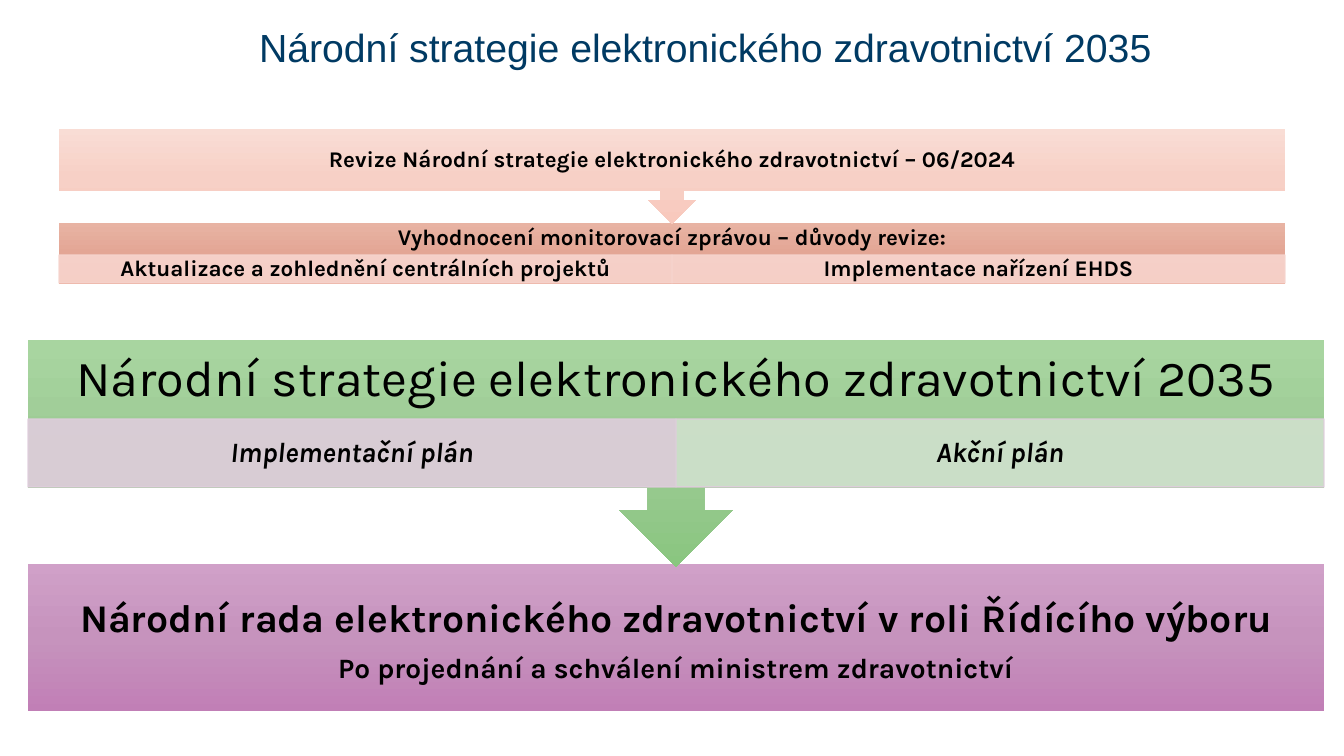
from copy import deepcopy

from lxml.etree import SubElement
from pptx import Presentation
from pptx.dml.color import RGBColor
from pptx.enum.shapes import MSO_SHAPE as SHAPE
from pptx.enum.text import MSO_ANCHOR as ANCHOR, MSO_AUTO_SIZE as AUTO_SIZE, PP_ALIGN as ALIGN
from pptx.oxml.ns import qn
from pptx.util import Emu, Pt

NAVY = RGBColor(0x00, 0x3A, 0x63)
BLACK = RGBColor(0x00, 0x00, 0x00)
PALE_SALMON = RGBColor(0xF7, 0xD5, 0xCE)
PALE_PURPLE = RGBColor(0xDF, 0xCD, 0xDC)
PALE_GREEN = RGBColor(0xD0, 0xE1, 0xCD)
SALMON = [RGBColor(0xE8, 0xB3, 0xA3), RGBColor(0xE3, 0xA6, 0x95), RGBColor(0xE4, 0x98, 0x81)]
PINK = [RGBColor(0xF9, 0xDD, 0xD5), RGBColor(0xF7, 0xD0, 0xC6), RGBColor(0xF8, 0xC9, 0xBD)]
PURPLE = [RGBColor(0xD0, 0xA0, 0xC8), RGBColor(0xC6, 0x93, 0xBD), RGBColor(0xC1, 0x7F, 0xB6)]
GREEN = [RGBColor(0xA8, 0xD5, 0xA0), RGBColor(0x9C, 0xCA, 0x94), RGBColor(0x8A, 0xC6, 0x80)]


def px(n):
    return Emu(round(n * 914400 / 100.8))


def add_block(kind, box, lines, insets, **font):
    block = slide.shapes.add_shape(kind, *map(px, box))
    block.shadow.inherit = False
    frame = block.text_frame
    frame.word_wrap = True
    frame.vertical_anchor = ANCHOR.MIDDLE
    for side, inset in zip(("left", "top", "right", "bottom"), insets):
        setattr(frame, f"margin_{side}", px(inset))
    for i, (text, size) in enumerate(lines):
        paragraph = frame.add_paragraph() if i else frame.paragraphs[0]
        paragraph.text = text
        paragraph.alignment = ALIGN.CENTER
        paragraph.line_spacing = 0.9
        paragraph.space_after = Pt(size * 0.35 if i < len(lines) - 1 else 0)
        paragraph.font.color.rgb = BLACK
        for name, value in {"name": "Karla", "size": Pt(size), **font}.items():
            setattr(paragraph.font, name, value)
    return block


deck = Presentation()
deck.slide_width, deck.slide_height = px(1344), px(756)
slide = deck.slides.add_slide(deck.slide_layouts[5])

title = slide.shapes.title
title.left, title.top, title.width, title.height = map(px, (249, 24, 1095, 68))
title.text = "Národní strategie elektronického zdravotnictví 2035"
title.text_frame.auto_size = AUTO_SIZE.NONE
title.text_frame.vertical_anchor = ANCHOR.TOP
heading = title.text_frame.paragraphs[0]
heading.alignment = ALIGN.LEFT
heading.line_spacing = 0.9
heading.font.color.rgb = NAVY
for name, value in {"name": "Arial", "size": Pt(28)}.items():
    setattr(heading.font, name, value)

banners = [
    (SHAPE.RECTANGLE, (59, 223, 1226, 61), SALMON, True, (12, 0, 12, 30),
     [("Vyhodnocení monitorovací zprávou – důvody revize:", 16)]),
    (SHAPE.DOWN_ARROW_CALLOUT, (59, 129, 1226, 95), PINK, True, (12, 0, 12, 0),
     [("Revize Národní strategie elektronického zdravotnictví – 06/2024", 16)]),
    (SHAPE.RECTANGLE, (28, 564, 1296, 147), PURPLE, True, (22, 8, 22, 0),
     [("Národní rada elektronického zdravotnictví v roli Řídícího výboru", 28),
      ("Po projednání a schválení ministrem zdravotnictví", 20)]),
    (SHAPE.DOWN_ARROW_CALLOUT, (28, 340, 1296, 227), GREEN, False, (28, 0, 28, 68),
     [("Národní strategie elektronického zdravotnictví 2035", 36)]),
]
for kind, box, colours, bold, insets, lines in banners:
    banner = add_block(kind, box, lines, insets, bold=bold)
    banner.line.fill.background()
    banner.fill.gradient()
    banner.fill.gradient_angle = 270
    stop_list = banner._element.spPr.find(".//" + qn("a:gsLst"))
    stop_list.insert(1, deepcopy(stop_list[0]))
    for stop, colour, position in zip(banner.fill.gradient_stops, colours, (0, 0.5, 1)):
        stop.color.rgb = colour
        stop.position = position

tile_rows = [
    (59, 255, 613, 28, 16, False, PALE_SALMON,
     [("Aktualizace a zohlednění centrálních projektů", PALE_SALMON),
      ("Implementace nařízení EHDS", PALE_SALMON)]),
    (28, 419, 648, 68, 20, True, PALE_PURPLE,
     [("Implementační plán", PALE_PURPLE), ("Akční plán", PALE_GREEN)]),
]
for left, top, width, height, size, italic, border, tiles in tile_rows:
    for column, (text, colour) in enumerate(tiles):
        box = (left + column * width, top, width, height)
        tile = add_block(SHAPE.RECTANGLE, box, [(text, size)], (12, 2, 12, 2), bold=True, italic=italic)
        tile.fill.solid()
        tile.fill.fore_color.rgb = colour
        tile.line.color.rgb = border
        tile.line.width = Pt(1)
        for tint in tile._element.spPr.iter(qn("a:srgbClr")):
            SubElement(tint, qn("a:alpha"), val="90000")

deck.save("out.pptx")
